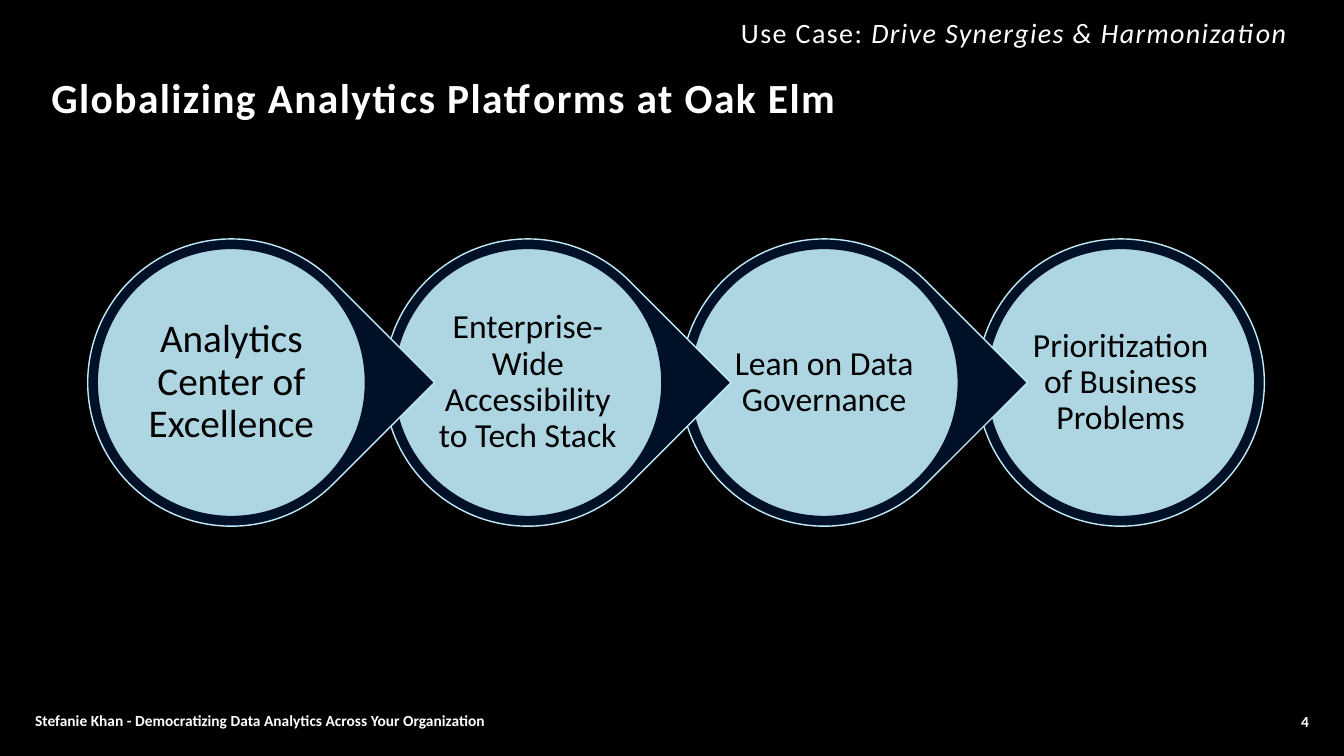
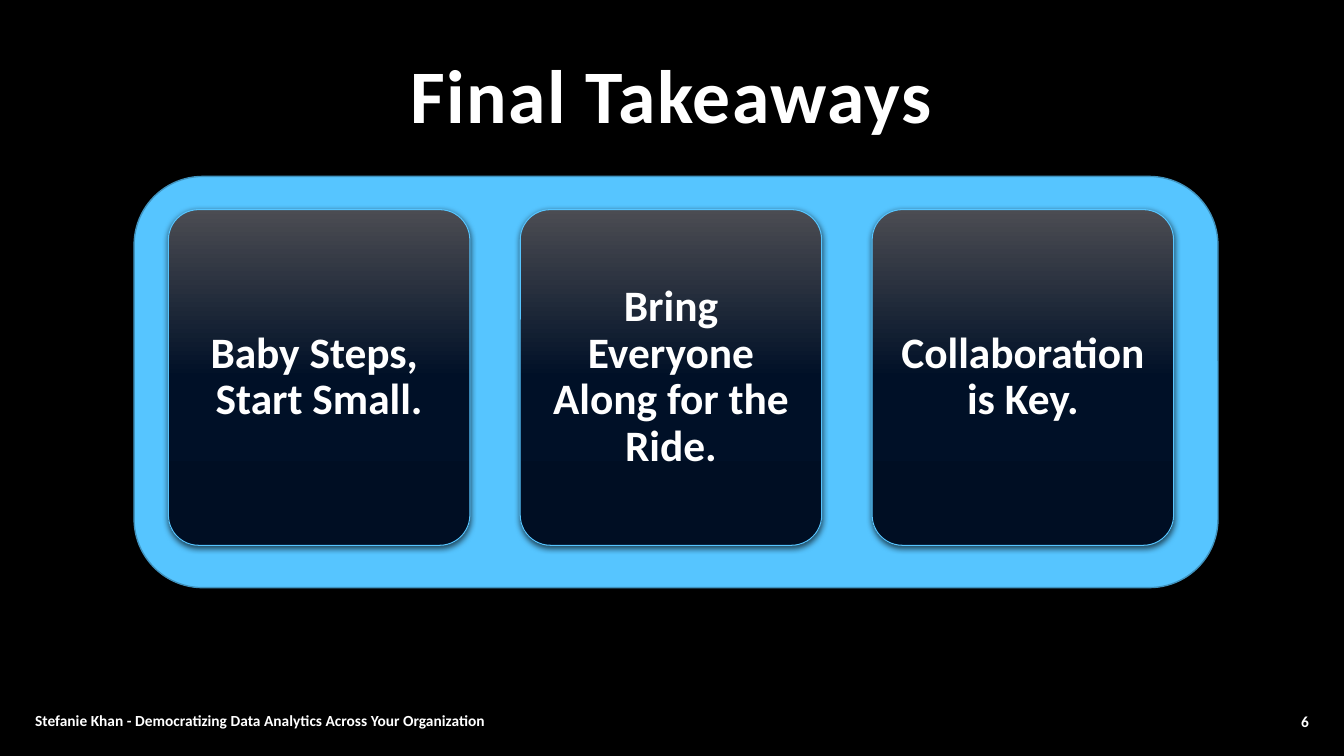
from lxml import etree
from pptx import Presentation
from pptx.dml.color import RGBColor
from pptx.enum.shapes import MSO_SHAPE
from pptx.enum.text import MSO_ANCHOR, MSO_AUTO_SIZE, PP_ALIGN
from pptx.oxml.ns import qn
from pptx.util import Inches, Pt

LEFT, CENTER, RIGHT = PP_ALIGN.LEFT, PP_ALIGN.CENTER, PP_ALIGN.RIGHT
TOP, MIDDLE, BOTTOM = MSO_ANCHOR.TOP, MSO_ANCHOR.MIDDLE, MSO_ANCHOR.BOTTOM
ELLIPSE, TEARDROP = MSO_SHAPE.OVAL, MSO_SHAPE.TEAR
CARD, PANEL = MSO_SHAPE.ROUNDED_RECTANGLE, MSO_SHAPE.FLOWCHART_ALTERNATE_PROCESS
NO_AUTOFIT = MSO_AUTO_SIZE.NONE

COLORS = {
    "background": "000000",
    "light_text": "FFFFFF",
    "dark_text": "000000",
    "navy": "001027",
    "ice": "C1EBF7",
    "sky": "56C5FF",
    "panel_line": "4092BD",
    "shadow": "000000",
}
CARD_GRADIENT = [(0, "4B4C52"), (50, "001027"), (100, "000E23")]
FONT_NAME = "Calibri"
FOOTER = "Stefanie Khan - Democratizing Data Analytics Across Your Organization"
SMALL_BOLD = {"size": Pt(11), "bold": True}
STEPS = [
    ("Analytics Center of Excellence", 28),
    ("Enterprise-Wide Accessibility to Tech Stack", 24),
    ("Lean on Data Governance", 24),
    ("Prioritization of Business Problems", 24),
]
TAKEAWAYS = [
    ["Baby Steps, ", "Start Small."],
    ["Bring Everyone Along for the Ride."],
    ["Collaboration is Key."],
]


def color(name):
    """Return the named colour of the palette."""
    return RGBColor.from_string(COLORS[name])


def set_values(target, values):
    """Set every attribute of a dict on the target."""
    for name, value in values.items():
        setattr(target, name, value)


def place(shape, left, top, width, height):
    """Move and size a shape, in inches."""
    box = {"left": left, "top": top, "width": width, "height": height}
    set_values(shape, {name: Inches(value) for name, value in box.items()})


def write_text(shape, paragraphs, font, align=LEFT, anchor=MIDDLE, line_spacing=1.0,
               text_color="light_text", inset=None, tracking=None):
    """Fill a shape with paragraphs, each a list of (text, extra font values) runs."""
    frame = shape.text_frame
    set_values(frame, {"word_wrap": True, "auto_size": NO_AUTOFIT, "vertical_anchor": anchor})
    if inset is not None:
        sides = ("margin_left", "margin_top", "margin_right", "margin_bottom")
        set_values(frame, dict.fromkeys(sides, Inches(inset)))
    for index, runs in enumerate(paragraphs):
        paragraph = frame.add_paragraph() if index else frame.paragraphs[0]
        set_values(paragraph, {"alignment": align, "line_spacing": line_spacing})
        for text, extra in runs:
            run = paragraph.add_run()
            run.text = text
            set_values(run.font, {"name": FONT_NAME, **font, **extra})
            run.font.color.rgb = color(text_color)
            if tracking:
                run.font._element.set("spc", str(tracking * 100))


def add_text(slide, box, runs, font, **layout):
    """Add a one-paragraph text box."""
    shape = slide.shapes.add_textbox(0, 0, 0, 0)
    place(shape, *box)
    write_text(shape, [runs], font, **layout)


def add_shape(slide, kind, box, fill, line, line_width=1):
    """Add a flat shape with a solid fill and an outline."""
    shape = slide.shapes.add_shape(kind, *(Inches(value) for value in box))
    shape.shadow.inherit = False
    shape.fill.solid()
    shape.fill.fore_color.rgb = color(fill)
    shape.line.color.rgb = color(line)
    shape.line.width = Pt(line_width)
    return shape


def add_color_element(parent, value, alpha=None):
    """Append an RGB colour, with an opacity in percent if given."""
    element = etree.SubElement(parent, qn("a:srgbClr"), val=value)
    if alpha is not None:
        etree.SubElement(element, qn("a:alpha"), val=str(alpha * 1000))


def set_opacity(shape, percent):
    """Make the solid fill of a shape partly transparent."""
    fill = shape._element.spPr.find(qn("a:solidFill"))
    etree.SubElement(fill[0], qn("a:alpha"), val=str(percent * 1000))


def set_gradient(shape, stops):
    """Give a shape a top-to-bottom gradient."""
    shape.fill.gradient()
    shape.fill.gradient_angle = 270
    stop_list = shape._element.spPr.find(f"{qn('a:gradFill')}/{qn('a:gsLst')}")
    for stop in list(stop_list):
        stop_list.remove(stop)
    for position, value in stops:
        stop = etree.SubElement(stop_list, qn("a:gs"), pos=str(position * 1000))
        add_color_element(stop, value)


def set_shadow(shape):
    """Give a shape a soft shadow below it."""
    effects = shape._element.spPr.find(qn("a:effectLst"))
    shadow = etree.SubElement(effects, qn("a:outerShdw"), blurRad=str(Pt(4.5)),
                              dist=str(Pt(1.5)), dir="5400000", rotWithShape="0")
    add_color_element(shadow, COLORS["shadow"], 63)


def add_slide(presentation, number, title, box, size, **layout):
    """Add a slide with its title, footer and number."""
    slide = presentation.slides.add_slide(presentation.slide_layouts[5])
    place(slide.shapes.title, *box)
    write_text(slide.shapes.title, [[(title, {})]], {"size": Pt(size), "bold": True},
               tracking=1, **layout)
    add_text(slide, (0.25, 7, 7.17, 0.3), [(FOOTER, {})], SMALL_BOLD)
    add_text(slide, (12.16, 7.01, 0.92, 0.3), [(number, {})], SMALL_BOLD, align=RIGHT)
    return slide


def add_step_chain(slide):
    """Draw the steps as discs on pointed rings, each overlapping the next."""
    first, pitch, top, ring, disc = 0.87, 2.94, 2.37, 2.85, 2.66
    border = (ring - disc) / 2
    last = len(STEPS) - 1
    for index, (text, size) in reversed(list(enumerate(STEPS))):
        left = first + index * pitch
        kind = ELLIPSE if index == last else TEARDROP
        outer = add_shape(slide, kind, (left, top, ring, ring), "navy", "ice")
        outer.rotation = 0 if index == last else 45
        inner = add_shape(slide, ELLIPSE, (left + border, top + border, disc, disc),
                          "ice", "navy")
        set_opacity(inner, 90)
        write_text(inner, [[(text, {})]], {"size": Pt(size)}, align=CENTER,
                   line_spacing=0.9, text_color="dark_text", inset=0.03)


def add_takeaway_cards(slide):
    """Draw the takeaways as a row of cards on a panel."""
    add_shape(slide, PANEL, (1.33, 1.75, 10.75, 4.08), "sky", "panel_line")
    first, pitch = 1.67, 3.49
    for index, lines in enumerate(TAKEAWAYS):
        box = (first + index * pitch, 2.08, 2.99, 3.33)
        card = add_shape(slide, CARD, box, "navy", "sky", 0.75)
        card.adjustments[0] = 0.1
        set_gradient(card, CARD_GRADIENT)
        set_shadow(card)
        write_text(card, [[(line, {})] for line in lines], {"size": Pt(31), "bold": True},
                   align=CENTER, line_spacing=0.9, inset=0.13)


def main():
    """Build and save the presentation."""
    presentation = Presentation()
    set_values(presentation, {"slide_width": Inches(13.33), "slide_height": Inches(7.5)})
    background = presentation.slide_master.background.fill
    background.solid()
    background.fore_color.rgb = color("background")

    platforms = add_slide(presentation, "4", "Globalizing Analytics Platforms at Oak Elm",
                          (0.41, 0.8, 11.58, 0.84), 29.6, anchor=TOP, line_spacing=0.7)
    add_text(platforms, (1.28, 0.14, 11.58, 1),
             [("Use Case: ", {}), ("Drive Synergies & Harmonization", {"italic": True})],
             {"size": Pt(20)}, align=RIGHT, anchor=TOP, line_spacing=0.9, tracking=1)
    add_step_chain(platforms)

    takeaways = add_slide(presentation, "6", "Final Takeaways", (0.87, 0.58, 11.58, 0.84),
                          54, align=CENTER, anchor=BOTTOM, line_spacing=0.8)
    add_takeaway_cards(takeaways)
    presentation.save("out.pptx")


if __name__ == "__main__":
    main()
